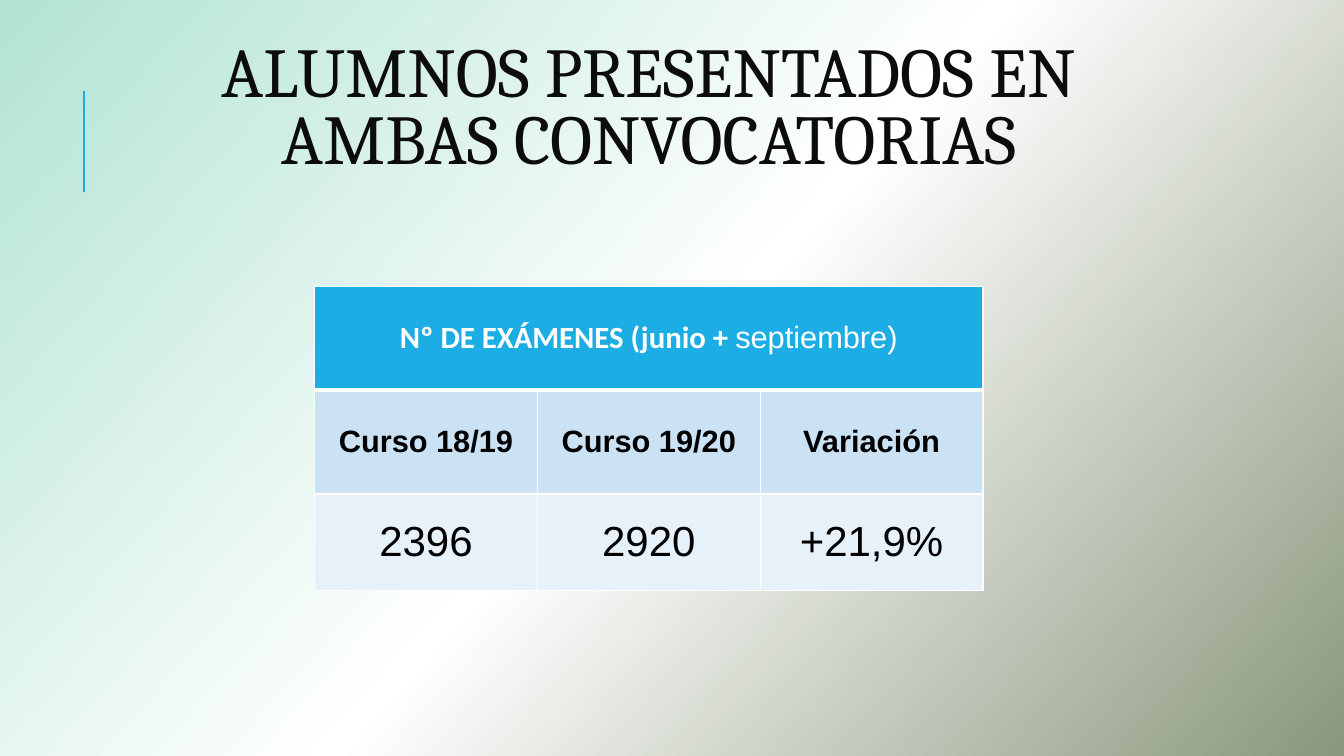
from copy import deepcopy
from dataclasses import dataclass

from lxml import etree
from pptx import Presentation
from pptx import util as u
from pptx.dml.color import RGBColor
from pptx.enum import shapes, text
from pptx.oxml.ns import qn


@dataclass(frozen=True)
class Theme:
    backdrop: tuple = ((0, "B2E3D5"), (50, "FFFFFF"), (100, "8A977D"))
    backdrop_angle: int = 42
    accent: str = "1CADE4"
    ink: str = "0C0C0C"
    black: str = "000000"
    white: str = "FFFFFF"
    band_dark: str = "CBE2F5"
    band_light: str = "E7F1FA"
    title_size: int = 50
    label_size: int = 22
    figure_size: int = 30
    title_font: str = "Cambria"
    label_font: str = "Calibri"
    body_font: str = "Arial"


def write(paragraph, wording, *, font, size, color, bold=False, spacing=None):
    paragraph.alignment = text.PP_ALIGN.CENTER
    if spacing:
        paragraph.line_spacing = spacing
    run = paragraph.add_run()
    run.text = wording
    run.font.name = font
    run.font.size = u.Pt(size)
    run.font.bold = bold
    run.font.color.rgb = RGBColor.from_string(color)


class SlideBuilder:
    def __init__(self, deck, theme):
        self.theme = theme
        self.slide = deck.slides.add_slide(deck.slide_layouts[5])

    def background(self):
        fill = self.slide.background.fill
        fill.gradient()
        fill.gradient_angle = 360 - self.theme.backdrop_angle
        stops = self.slide.element.find(".//" + qn("a:gsLst"))
        for stop in list(stops):
            stops.remove(stop)
        for position, color in self.theme.backdrop:
            stop = etree.SubElement(stops, qn("a:gs"), pos=str(position * 1000))
            etree.SubElement(stop, qn("a:srgbClr"), val=color)

    def accent_line(self, x, top, bottom):
        accent = self.slide.shapes.add_connector(
            shapes.MSO_CONNECTOR.STRAIGHT,
            u.Inches(x), u.Inches(bottom), u.Inches(x), u.Inches(top))
        accent.line.color.rgb = RGBColor.from_string(self.theme.accent)
        accent.line.width = u.Pt(1.5)
        etree.SubElement(accent.element.spPr, qn("a:effectLst"))

    def title(self, wording, left, top, width, height):
        heading = self.slide.shapes.title
        heading.left, heading.top = u.Inches(left), u.Inches(top)
        heading.width, heading.height = u.Inches(width), u.Inches(height)
        frame = heading.text_frame
        frame.word_wrap = True
        frame.auto_size = text.MSO_AUTO_SIZE.NONE
        frame.vertical_anchor = text.MSO_ANCHOR.MIDDLE
        frame.margin_bottom = u.Inches(0.71)
        write(frame.paragraphs[0], wording, font=self.theme.title_font,
              size=self.theme.title_size, color=self.theme.ink, spacing=0.8)

    def table(self, left, top, column_width, row_heights, columns):
        exams = self.slide.shapes.add_table(
            len(row_heights), columns, u.Inches(left), u.Inches(top),
            u.Inches(column_width * columns), u.Inches(sum(row_heights))).table
        for column in exams.columns:
            column.width = u.Inches(column_width)
        for row, height in zip(exams.rows, row_heights):
            row.height = u.Inches(height)
        return exams

    def cell(self, cell, fill, top=1, bottom=1):
        cell.vertical_anchor = text.MSO_ANCHOR.MIDDLE
        cell.fill.solid()
        cell.fill.fore_color.rgb = RGBColor.from_string(fill)
        properties = cell._tc.get_or_add_tcPr()
        border = etree.Element(qn("a:ln"))
        solid = etree.SubElement(border, qn("a:solidFill"))
        etree.SubElement(solid, qn("a:srgbClr"), val=self.theme.white)
        for index, (side, width) in enumerate(
                (("L", 1), ("R", 1), ("T", top), ("B", bottom))):
            edge = deepcopy(border)
            edge.tag = qn("a:ln" + side)
            edge.set("w", str(u.Pt(width)))
            properties.insert(index, edge)
        return cell.text_frame.paragraphs[0]


def main():
    theme = Theme()
    deck = Presentation()
    deck.slide_width, deck.slide_height = u.Inches(13.33), u.Inches(7.5)
    page = SlideBuilder(deck, theme)
    page.background()
    page.accent_line(0.83, 0.9, 1.9)
    page.title("ALUMNOS PRESENTADOS EN AMBAS CONVOCATORIAS",
               1.12, 0.61, 10.63, 1.64)

    courses = ("Curso 18/19", "Curso 19/20", "Variación")
    figures = ("2396", "2920", "+21,9%")
    exams = page.table(3.12, 2.84, 2.21, (1.03, 1.03, 0.96), len(courses))
    exams.cell(0, 0).merge(exams.cell(0, len(courses) - 1))
    headings = [page.cell(exams.cell(0, column), theme.accent, bottom=3)
                for column in range(len(courses))]
    header = dict(size=theme.label_size, color=theme.white)
    write(headings[0], "Nº DE EXÁMENES (junio + ",
          font=theme.label_font, bold=True, **header)
    write(headings[0], "septiembre)", font=theme.body_font, **header)

    for column, (course, figure) in enumerate(zip(courses, figures)):
        write(page.cell(exams.cell(1, column), theme.band_dark, top=3), course,
              font=theme.body_font, size=theme.label_size,
              color=theme.black, bold=True)
        write(page.cell(exams.cell(2, column), theme.band_light), figure,
              font=theme.body_font, size=theme.figure_size, color=theme.black)

    deck.save("out.pptx")


if __name__ == "__main__":
    main()
